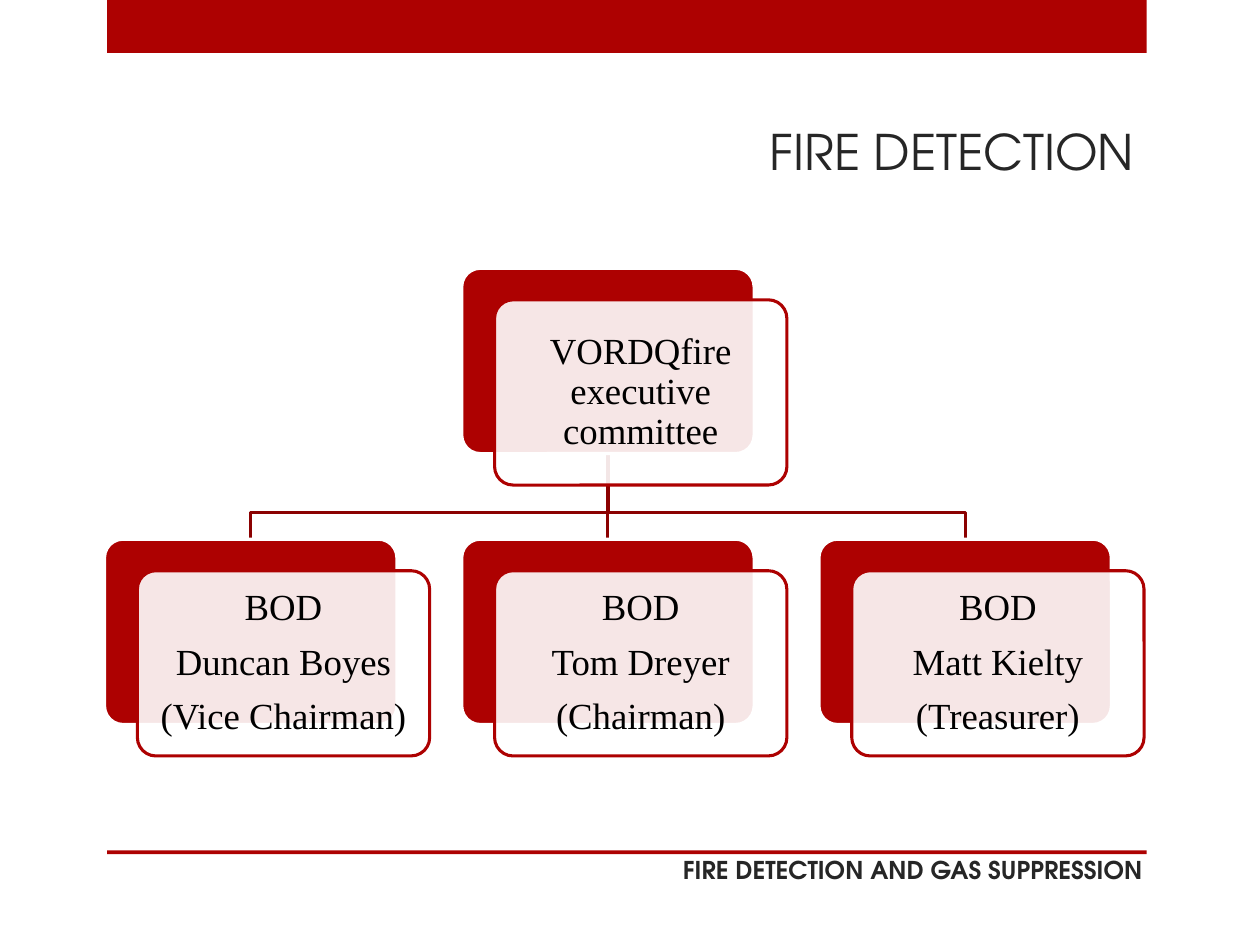
from lxml import etree
from pptx import Presentation, util as u
from pptx.dml.color import RGBColor
from pptx.enum import shapes, text
from pptx.oxml.ns import qn

TITLE = "FIRE DETECTION"
FOOTER = "FIRE DETECTION AND GAS SUPPRESSION"
COMMITTEE = ["VORDQfire executive committee"]
MEMBERS = [
    ["BOD", "Duncan Boyes", "(Vice Chairman)"],
    ["BOD", "Tom Dreyer", "(Chairman)"],
    ["BOD", "Matt Kielty", "(Treasurer)"],
]
COLORS = {"red": "AD0101", "branch": "8B0101", "white": "FFFFFF",
          "heading": "262626", "black": "000000"}
HEADING_FONT, BODY_FONT = "TeX Gyre Adventor", "Times New Roman"

WIDTH, HEIGHT = 10, 7.5
BAND_LEFT, BAND_WIDTH = 0.85, 8.25
CARD_W, CARD_H = 2.32, 1.47
CHART_LEFT, COLUMN_STEP = 0.83, 2.835
COMMITTEE_TOP, MEMBER_TOP = 2.13, 4.28
OFFSET_X, OFFSET_Y = 0.26, 0.25
BRANCH_Y = 4.07
CARD_INSET = 0.13
LINE_WIDTH = 1.75


def color(name):
    return RGBColor.from_string(COLORS[name])


def write(frame, lines, size, font, ink="black", bold=False, align="CENTER",
          anchor="MIDDLE", inset=(0.1, 0.05), spacing=1.0, after=0):
    frame.word_wrap = True
    frame.auto_size = text.MSO_AUTO_SIZE.NONE
    frame.vertical_anchor = text.MSO_ANCHOR[anchor]
    frame.margin_left = frame.margin_right = u.Inches(inset[0])
    frame.margin_top = frame.margin_bottom = u.Inches(inset[1])
    for index, line in enumerate(lines):
        paragraph = frame.add_paragraph() if index else frame.paragraphs[0]
        paragraph.alignment = text.PP_ALIGN[align]
        paragraph.line_spacing = spacing
        paragraph.space_before, paragraph.space_after = u.Pt(0), u.Pt(after)
        run = paragraph.add_run()
        run.text = line
        run.font.name, run.font.size, run.font.bold = font, u.Pt(size), bold
        run.font.color.rgb = color(ink)


def block(slide, kind, left, top, width, height, fill, line=None):
    shape = slide.shapes.add_shape(kind, *map(u.Inches, (left, top, width, height)))
    shape.shadow.inherit = False
    shape.fill.solid()
    shape.fill.fore_color.rgb = color(fill)
    if line:
        shape.line.color.rgb = color(line)
        shape.line.width = u.Pt(LINE_WIDTH)
    else:
        shape.line.fill.background()
    return shape


def card(slide, left, top, lines):
    rounded = shapes.MSO_SHAPE.ROUNDED_RECTANGLE
    back = block(slide, rounded, left, top, CARD_W, CARD_H, "red", "white")
    front = block(slide, rounded, left + OFFSET_X, top + OFFSET_Y,
                  CARD_W, CARD_H, "white", "red")
    for layer in (back, front):
        layer.adjustments[0] = 0.1
    tint = front.fill._xPr.find(qn("a:solidFill"))[0]
    etree.SubElement(tint, qn("a:alpha"), val="90000")
    write(front.text_frame, lines, 21, BODY_FONT, inset=(CARD_INSET, CARD_INSET),
          spacing=0.9, after=8.4)


def branch(slide, start_x, end_x):
    start_y = COMMITTEE_TOP + CARD_H
    if start_x == end_x:
        line = slide.shapes.add_connector(
            shapes.MSO_CONNECTOR.STRAIGHT,
            *map(u.Inches, (start_x, start_y, end_x, MEMBER_TOP)))
        etree.SubElement(line._element.spPr, qn("a:effectLst"))
    else:
        outline = slide.shapes.build_freeform(
            u.Inches(start_x), u.Inches(start_y))
        corners = [(start_x, BRANCH_Y), (end_x, BRANCH_Y), (end_x, MEMBER_TOP)]
        outline.add_line_segments(
            [(u.Inches(x), u.Inches(y)) for x, y in corners], close=False)
        line = outline.convert_to_shape()
        line.shadow.inherit = False
        line.fill.background()
    line.line.color.rgb = color("branch")
    line.line.width = u.Pt(LINE_WIDTH)


def main():
    deck = Presentation()
    deck.slide_width, deck.slide_height = u.Inches(WIDTH), u.Inches(HEIGHT)
    slide = deck.slides.add_slide(deck.slide_layouts[5])

    for top, height in [(0, 0.42), (6.75, 0.03)]:
        block(slide, shapes.MSO_SHAPE.RECTANGLE,
              BAND_LEFT, top, BAND_WIDTH, height, "red")

    heading = slide.shapes.title
    heading.left, heading.top = u.Inches(CHART_LEFT), u.Inches(0.75)
    heading.width, heading.height = u.Inches(8.27), u.Inches(0.9)
    write(heading.text_frame, [TITLE], 28, HEADING_FONT, "heading", align="RIGHT")

    footer = slide.shapes.add_textbox(*map(u.Inches, (0.67, 6.74, 8.5, 0.4)))
    write(footer.text_frame, [FOOTER], 14, HEADING_FONT, "heading", bold=True,
          align="RIGHT", anchor="TOP")

    columns = [CHART_LEFT + i * COLUMN_STEP for i in range(len(MEMBERS))]
    committee_left = columns[len(columns) // 2]
    for left in reversed(columns):
        branch(slide, committee_left + CARD_W / 2, left + CARD_W / 2)
    card(slide, committee_left, COMMITTEE_TOP, COMMITTEE)
    for left, member in zip(columns, MEMBERS):
        card(slide, left, MEMBER_TOP, member)

    deck.save("out.pptx")


if __name__ == "__main__":
    main()
